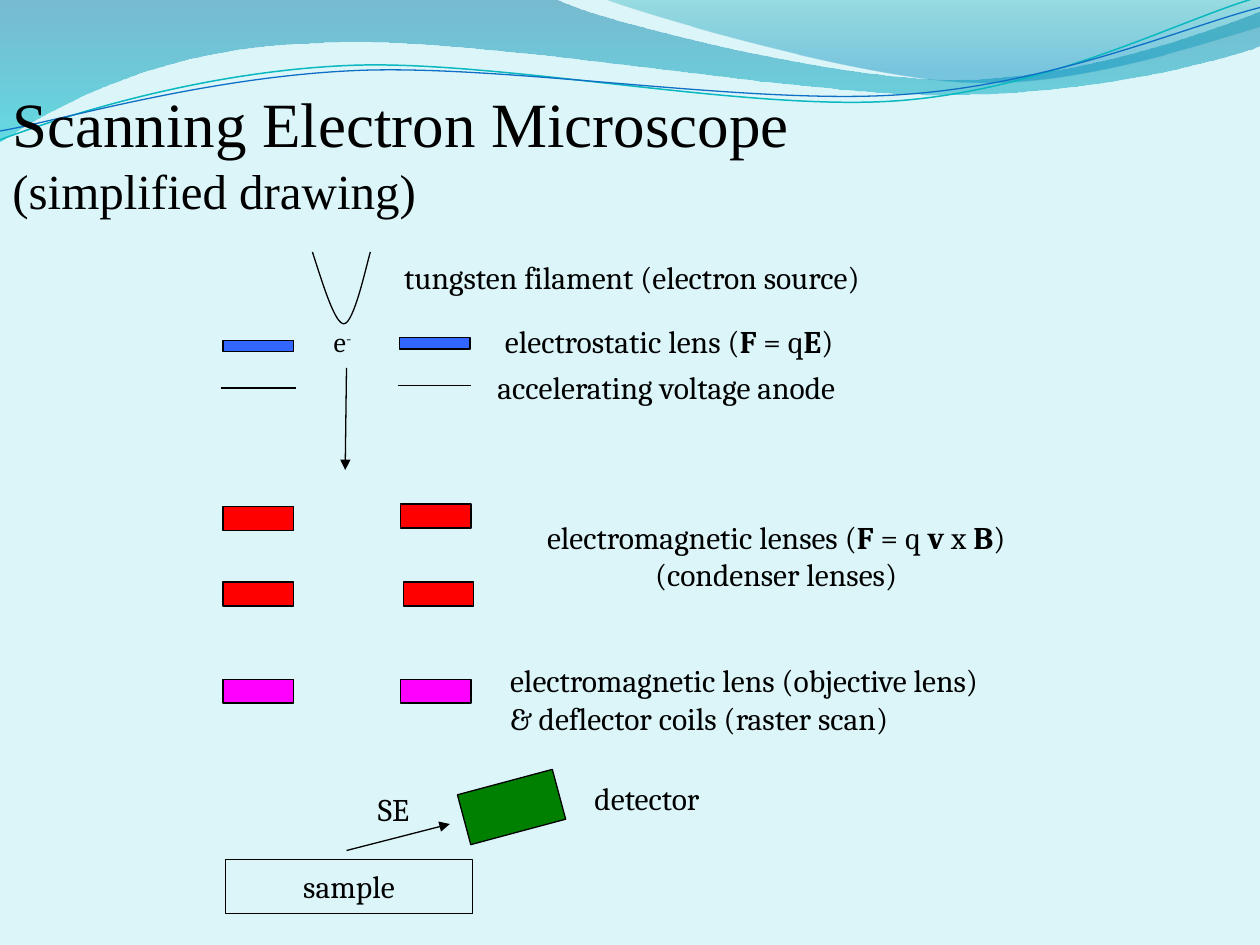
from pptx import Presentation
from pptx.util import Inches, Pt
from pptx.dml.color import RGBColor
from pptx.enum.shapes import MSO_SHAPE, MSO_CONNECTOR
from pptx.enum.text import PP_ALIGN, MSO_ANCHOR, MSO_AUTO_SIZE
from pptx.oxml.ns import qn
from lxml.etree import SubElement, Element

W, H = 10, 7.5
INK = "000000"
SERIF, BODY = "Times New Roman", "Cambria"

# Outlines: start point, then segments of one point (line) or three (curve)
BANDS = [  # start, segments, gradient stops (place, colour, opacity %)
    ((0, 0), [
        [(4.4, -0.01)],
        [(4.76, 0.17), (6.64, 0.63), (7.58, 0.63)],
        [(8.53, 0.63), (9.58, 0.26), (10, 0.09)],
        [(10.01, 0.36)],
        [(9.83, 0.44), (8.7, 0.76), (7.46, 0.75)],
        [(6.22, 0.75), (3.82, 0.28), (2.57, 0.34)],
        [(1.29, 0.36), (0.46, 0.83), (-0.01, 1.13)],
    ], [(0, "0074A1", 45), (1, "00C6CF", 55)]),
    ((4.79, -0.01), [
        [(5.09, 0.11), (6.82, 0.62), (7.69, 0.65)],
        [(8.56, 0.69), (9.61, 0.32), (10, 0.21)],
        [(10, 0)],
    ], [(0, "00A1A9", 30), (0.8, "008BBF", 45)]),
]
CURVES = [  # start, segments, colour, line width
    ((0, 1.11), [
        [(0.48, 0.93), (1.58, 0.57), (2.77, 0.52)],
        [(3.95, 0.47), (5.93, 0.89), (7.13, 0.8)],
        [(8.33, 0.71), (9.38, 0.15), (9.98, -0.02)],
    ], "0AB8BF", 0.85),
    ((0, 1.04), [
        [(0.47, 0.96), (1.64, 0.61), (2.83, 0.56)],
        [(4.03, 0.51), (5.97, 0.84), (7.17, 0.75)],
        [(8.36, 0.67), (9.41, 0.21), (10, 0.06)],
    ], "0F6FC6", 0.75),
    ((2.48, 2), [  # filament
        [(2.57, 2.28), (2.66, 2.57), (2.73, 2.57)],
        [(2.81, 2.57), (2.91, 2.1), (2.94, 2)],
    ], INK, 0.75),
]

# Lens pairs: left top, right x, right top, height, colour
LEFT, LENS = 1.77, 0.56
PAIRS = [
    (2.7, 3.17, 2.68, 0.09, "3366FF"),
    (4.02, 3.18, 4, 0.19, "FF0000"),
    (4.62, 3.2, 4.62, 0.19, "FF0000"),
    (5.39, 3.18, 5.39, 0.19, "FF00FF"),
]
LINES = [  # from, to, arrow
    ((1.75, 3.08), (2.35, 3.08), False),
    ((3.16, 3.06), (3.74, 3.06), False),
    ((2.75, 2.92), (2.74, 3.73), True),
    ((2.75, 6.75), (3.57, 6.54), True),
]

# Labels: box, size, centred, paragraphs of (text, style) runs
LABELS = [
    ((3.11, 2, 4.4, 0.42), 18, False, [[("tungsten filament (electron source)", "")]]),
    ((3.91, 2.51, 3.24, 0.42), 18, False,
     [[("electrostatic lens (", ""), ("F", "bold"), (" = q", ""), ("E", "bold"), (")", "")]]),
    ((3.85, 2.87, 3.33, 0.42), 18, False, [[("accelerating voltage anode", "")]]),
    ((3.95, 4.06, 4.42, 0.74), 18, True,
     [[("electromagnetic lenses (", ""), ("F", "bold"), (" = q ", ""), ("v", "bold"),
       (" x ", ""), ("B", "bold"), (")", "")],
      [("(condenser lenses)", "")]]),
    ((3.95, 5.2, 4.55, 0.74), 18, False,
     [[("electromagnetic lens (objective lens)", "")],
      [("& deflector coils (raster scan)", "")]]),
    ((2.55, 2.53, 0.42, 0.42), 16, False, [[("e", ""), ("-", "super")]]),
    ((4.62, 6.13, 1.26, 0.42), 18, False, [[("detector", "")]]),
    ((2.9, 6.22, 0.52, 0.42), 18, False, [[("SE", "")]]),
]

deck = Presentation()
deck.slide_width, deck.slide_height = Inches(W), Inches(H)
slide = deck.slides.add_slide(deck.slide_layouts[6])
shapes = slide.shapes


def rgb(code):
    return RGBColor.from_string(code)


def box(area):
    return [Inches(v) for v in area]


def stroke(item, code=INK, width=0.75):
    item.line.color.rgb = rgb(code)
    item.line.width = Pt(width)


def style(run, size, font=BODY):
    run.font.size, run.font.name = Pt(size), font
    run.font.color.rgb = rgb(INK)


def outline(start, parts, close):
    maker = shapes.build_freeform(*box(start), scale=1.0)
    maker.add_line_segments([box(p) for part in parts for p in part], close=close)
    form = maker.convert_to_shape()
    form.shadow.inherit = False
    # Turn each run of three points into one cubic curve
    steps = iter(list(form._element.iter(qn("a:lnTo"))))
    for part in parts:
        nodes = [next(steps) for _ in part]
        if len(part) == 3:
            curve = Element(qn("a:cubicBezTo"))
            nodes[0].addprevious(curve)
            for node in nodes:
                curve.append(node[0])
                node.getparent().remove(node)
    return form


def rect(area, code=None):
    item = shapes.add_shape(MSO_SHAPE.RECTANGLE, *box(area))
    item.shadow.inherit = False
    if code:
        item.fill.solid()
        item.fill.fore_color.rgb = rgb(code)
    else:
        item.fill.background()
    stroke(item)
    return item


# Background waves and filament
slide.background.fill.solid()
slide.background.fill.fore_color.rgb = rgb("DBF5F9")
for start, parts, stops in BANDS:
    band = outline(start, parts, True)
    band.line.fill.background()
    band.fill.gradient()
    band.fill.gradient_angle = 270
    for stop, (place, code, alpha) in zip(band.fill.gradient_stops, stops):
        stop.position, stop.color.rgb = place, rgb(code)
    tints = band._element.spPr.find(qn("a:gradFill")).iter(qn("a:srgbClr"))
    for tint, (_, _, alpha) in zip(list(tints), stops):
        SubElement(tint, qn("a:alpha")).set("val", str(alpha * 1000))
for start, parts, code, width in CURVES:
    wave = outline(start, parts, False)
    wave.fill.background()
    stroke(wave, code, width)

# Title
frame = shapes.add_textbox(*box((0, 0.58, 6.91, 1.25))).text_frame
frame.word_wrap, frame.vertical_anchor = True, MSO_ANCHOR.MIDDLE
frame.paragraphs[0].text = "Scanning Electron Microscope\v(simplified drawing)"
for run, size in zip(frame.paragraphs[0].runs, (36, 28)):
    style(run, size, SERIF)

# Lenses, sample and detector
for top, right, level, tall, code in PAIRS:
    rect((LEFT, top, LENS, tall), code)
    rect((right, level, LENS, tall), code)
sample = rect((1.79, 6.82, 1.96, 0.43))
sample.text_frame.text = "sample"
sample.text_frame.paragraphs[0].alignment = PP_ALIGN.CENTER
style(sample.text_frame.paragraphs[0].runs[0], 18)
rect((3.67, 6.2, 0.78, 0.41), "008000").rotation = 345

# Anode lines and beam arrows
for start, end, arrow in LINES:
    link = shapes.add_connector(MSO_CONNECTOR.STRAIGHT, *box(start + end))
    stroke(link)
    if arrow:
        SubElement(link.line._get_or_add_ln(), qn("a:tailEnd")).set("type", "triangle")
    SubElement(link._element.spPr, qn("a:effectLst"))

# Labels
for area, size, mid, paras in LABELS:
    frame = shapes.add_textbox(*box(area)).text_frame
    frame.word_wrap, frame.auto_size = False, MSO_AUTO_SIZE.SHAPE_TO_FIT_TEXT
    for i, parts in enumerate(paras):
        para = frame.add_paragraph() if i else frame.paragraphs[0]
        para.alignment = PP_ALIGN.CENTER if mid else PP_ALIGN.LEFT
        for text, kind in parts:
            run = para.add_run()
            run.text = text
            style(run, size)
            run.font.bold = kind == "bold"
            if kind == "super":
                run._r.get_or_add_rPr().set("baseline", "30000")

deck.save("out.pptx")
